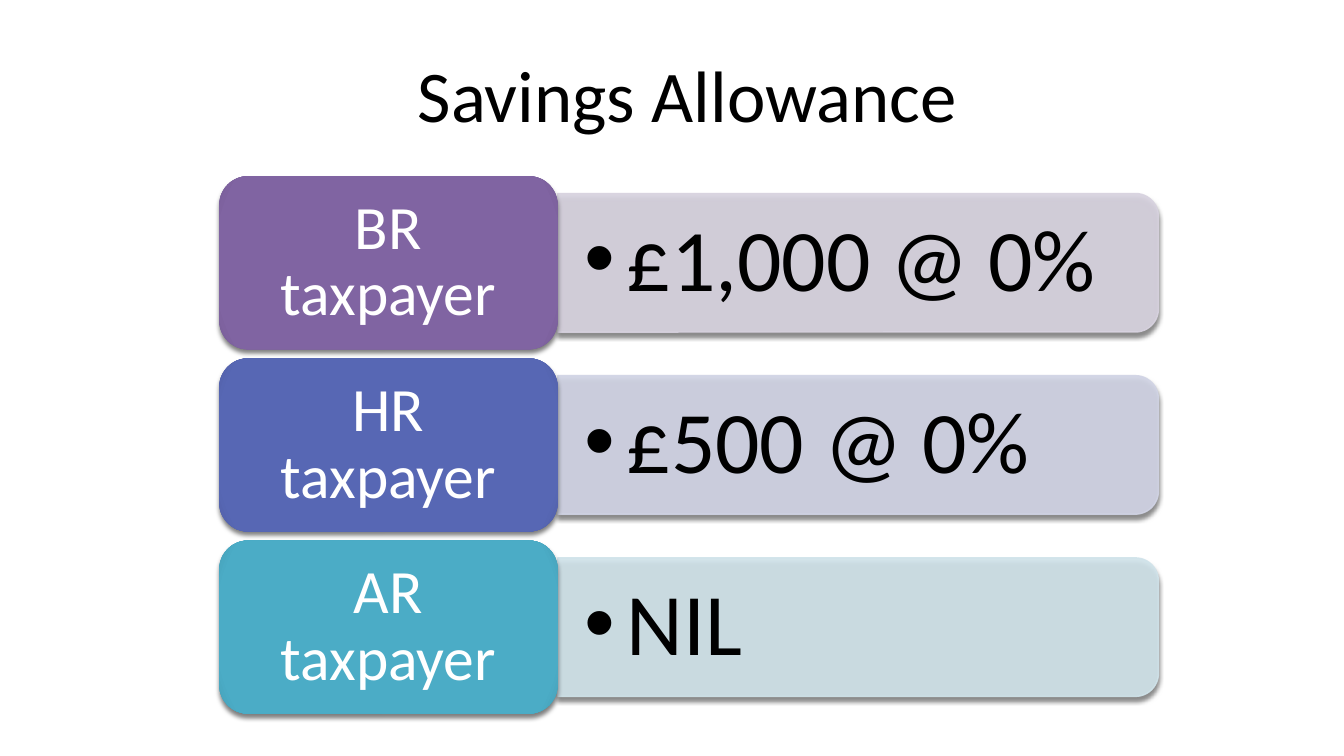
from dataclasses import dataclass

from lxml.etree import SubElement as Sub
from pptx import Presentation
from pptx.dml.color import RGBColor as Rgb
from pptx.enum.shapes import MSO_SHAPE as Geo
from pptx.enum.text import MSO_ANCHOR as Anchor, PP_ALIGN as Align
from pptx.oxml.ns import qn
from pptx.util import Pt


@dataclass(frozen=True)
class Theme:
    font: str = "Calibri"
    dark: str = "000000"
    light: str = "FFFFFF"
    head: int = 39
    tag: int = 33
    item: int = 47


class Deck:
    """Hold the theme and the slide, and draw each kind of element."""

    def __init__(self, theme, slide):
        self.theme, self.slide = theme, slide

    def text(self, words, box, size, color, pad, align=Align.CENTER,
             anchor=Anchor.MIDDLE, space=0.9):
        frame = self.slide.shapes.add_textbox(*map(Pt, box)).text_frame
        frame.word_wrap = True
        frame.vertical_anchor = anchor
        frame.margin_left = frame.margin_right = Pt(pad[0])
        frame.margin_top = frame.margin_bottom = Pt(pad[1])
        frame.text = words
        para = frame.paragraphs[0]
        para.alignment, para.line_spacing = align, space
        font = para.runs[0].font
        font.name, font.size = self.theme.font, Pt(size)
        font.color.rgb = Rgb.from_string(color)
        return para

    def bullet(self, words, box):
        para = self.text(words, box, self.theme.item, self.theme.dark,
                         (14.4, 7.2), Align.LEFT)
        props = para._p.get_or_add_pPr()
        props.set("marL", str(Pt(22.5)))
        props.set("indent", str(Pt(-22.5)))
        Sub(props, qn("a:buFont"), typeface="Arial")
        Sub(props, qn("a:buChar"), char="•")

    def shade(self, shape):
        fx = Sub(shape.element.spPr, qn("a:effectLst"))
        drop = Sub(fx, qn("a:outerShdw"), blurRad=str(Pt(2.5)),
                   dist=str(Pt(2)), dir="5400000", rotWithShape="0")
        tone = Sub(drop, qn("a:srgbClr"), val=self.theme.dark)
        Sub(tone, qn("a:alpha"), val="50000")

    def bar(self, left, top, wide, high, color):
        shift = (wide - high) / 2
        shape = self.slide.shapes.add_shape(
            Geo.ROUND_2_SAME_RECTANGLE, Pt(left + shift), Pt(top - shift),
            Pt(high), Pt(wide))
        shape.rotation = 90
        shape.fill.solid()
        shape.fill.fore_color.rgb = Rgb.from_string(color)
        shape.line.color.rgb = Rgb.from_string(color)
        shape.line.width = Pt(0.79)
        for tone in shape.element.spPr.iter(qn("a:srgbClr")):
            Sub(tone, qn("a:alpha"), val="90000")
        self.shade(shape)

    def tile(self, box, color, edge):
        shape = self.slide.shapes.add_shape(
            Geo.ROUNDED_RECTANGLE, *map(Pt, box))
        shape.line.fill.background()
        shape.fill.gradient()
        grad = shape.element.spPr.find(qn("a:gradFill"))
        for node in list(grad):
            grad.remove(node)
        stops = Sub(grad, qn("a:gsLst"))
        for place, tone in ((0, color), (90, color), (100, edge)):
            stop = Sub(stops, qn("a:gs"), pos=str(place * 1000))
            Sub(stop, qn("a:srgbClr"), val=tone)
        ring = Sub(grad, qn("a:path"), path="circle")
        Sub(ring, qn("a:fillToRect"), l="100000", t="100000",
            r="100000", b="100000")
        self.shade(shape)


def main():
    show = Presentation()
    show.slide_width, show.slide_height = Pt(720), Pt(405)
    theme = Theme()
    deck = Deck(theme, show.slides.add_slide(show.slide_layouts[6]))
    deck.text("Savings Allowance", (34.6, 21.6, 667.4, 47.5), theme.head,
              theme.dark, (7.2, 5), anchor=Anchor.TOP, space=1)

    rows = (
        ("BR taxpayer", "£1,000 @ 0%", "8064A2", "775D97", "D8D3E0"),
        ("HR taxpayer", "£500 @ 0%", "5767B4", "5160A8", "D1D4E5"),
        ("AR taxpayer", "NIL", "4BACC6", "46A0B8", "D0E3EA"),
    )
    left, top, wide, high, step = 117.4, 94.4, 181.4, 92.8, 97.6
    span, thick, inset = 321.8, 74.2, 4.5
    for row, (tag, item, color, edge, pale) in enumerate(rows):
        y = top + row * step
        mid = y + high / 2
        deck.bar(left + wide, mid - thick / 2, span, thick, pale)
        deck.bullet(item, (left + wide, mid - 33.5, 318.2, 67))
        deck.tile((left, y, wide, high), color, edge)
        deck.text(tag, (left + inset, y + inset, wide - 2 * inset,
                        high - 2 * inset), theme.tag, theme.light, (10, 5))
    show.save("out.pptx")


if __name__ == "__main__":
    main()
